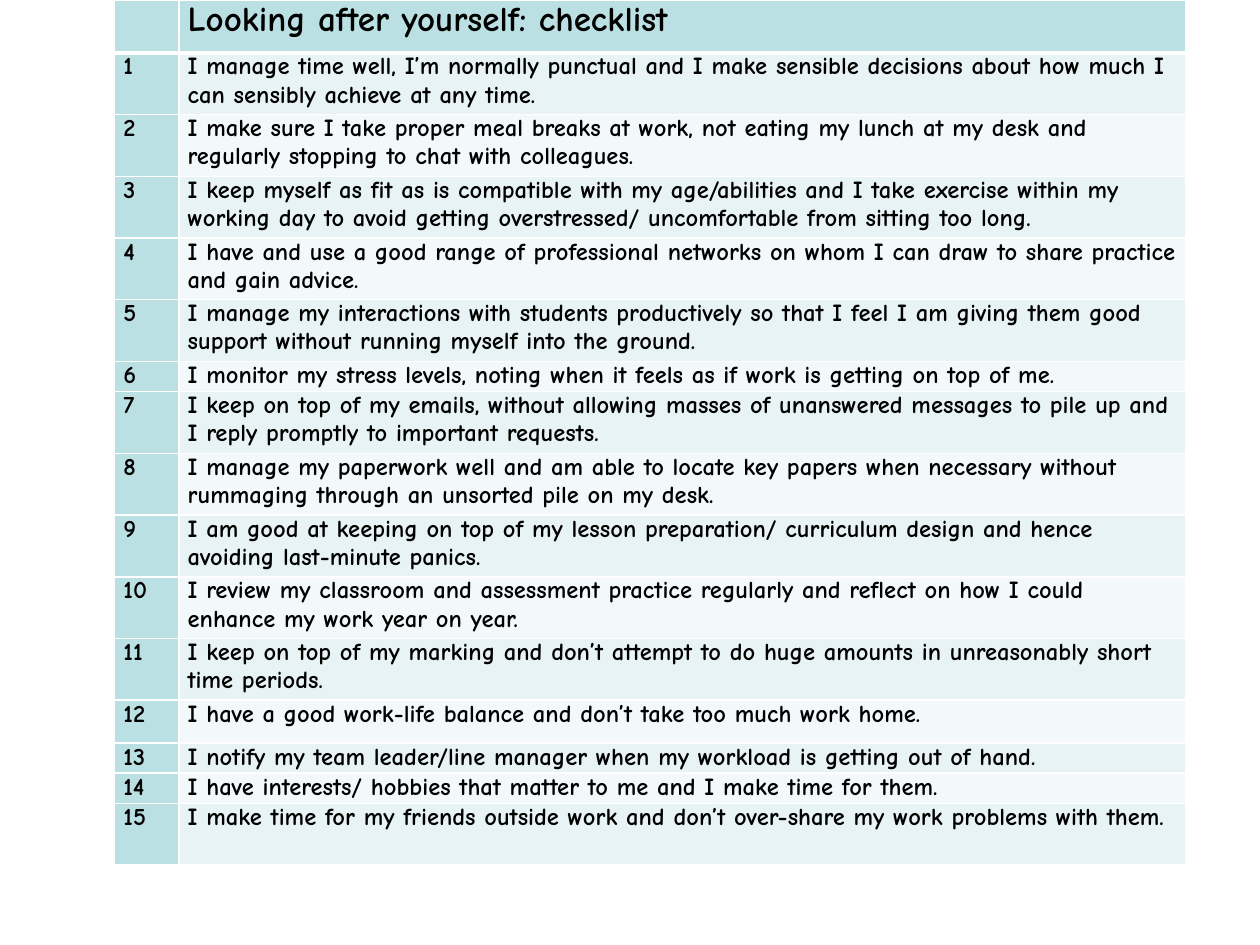
import pptx
import pptx.dml.color
import pptx.oxml
import pptx.oxml.ns
import pptx.util
from pptx.util import Inches

HEADING = "Looking after yourself: checklist"
TALL, MIDDLE, SHORT = 0.49, 0.34, 0.24
CHECKLIST = [
    ("I manage time well, I’m normally punctual and I make sensible decisions about how much I can sensibly achieve at any time.", TALL),
    ("I make sure I take proper meal breaks at work, not eating my lunch at my desk and regularly stopping to chat with colleagues.", TALL),
    ("I keep myself as fit as is compatible with my age/abilities and I take exercise within my working day to avoid getting overstressed/ uncomfortable from sitting too long.", TALL),
    ("I have and use a good range of professional networks on whom I can draw to share practice and gain advice.", TALL),
    ("I manage my interactions with students productively so that I feel I am giving them good support without running myself into the ground.", TALL),
    ("I monitor my stress levels, noting when it feels as if work is getting on top of me.", SHORT),
    ("I keep on top of my emails, without allowing masses of unanswered messages to pile up and I reply promptly to important requests.", TALL),
    ("I manage my paperwork well and am able to locate key papers when necessary without rummaging through an unsorted pile on my desk.", TALL),
    ("I am good at keeping on top of my lesson preparation/ curriculum design and hence avoiding last-minute panics.", TALL),
    ("I review my classroom and assessment practice regularly and reflect on how I could enhance my work year on year.", TALL),
    ("I keep on top of my marking and don’t attempt to do huge amounts in unreasonably short time periods.", TALL),
    ("I have a good work-life balance and don’t take too much work home.", MIDDLE),
    ("I notify my team leader/line manager when my workload is getting out of hand.", SHORT),
    ("I have interests/ hobbies that matter to me and I make time for them.", SHORT),
    ("I make time for my friends outside work and don’t over-share my work problems with them.", TALL),
]
COLUMN_WIDTHS = [0.51, 7.99]
HEADER_HEIGHT = 0.42
TEAL, BANDS = "BBE0E3", ["E7F3F4", "F3F9FA"]
BORDER = "FFFFFF"
CELL_FORMAT = {
    "margin_left": Inches(0.07),
    "margin_right": Inches(0.07),
    "margin_top": 0,
    "margin_bottom": 0,
}


def color(value):
    return pptx.dml.color.RGBColor.from_string(value)


def set_borders(cell, bottom, top):
    """Draw the four cell edges; widths are in points."""
    properties = cell._tc.get_or_add_tcPr()
    for side, width in {"L": 1, "R": 1, "T": top, "B": bottom}.items():
        properties.append(pptx.oxml.parse_xml(
            f'<a:ln{side} {pptx.oxml.ns.nsdecls("a")} w="{pptx.util.Pt(width)}">'
            f'<a:solidFill><a:srgbClr val="{BORDER}"/></a:solidFill></a:ln{side}>'))


def fill_cell(cell, text, size, fill, bottom=1, top=1):
    for name, value in CELL_FORMAT.items():
        setattr(cell, name, value)
    set_borders(cell, bottom, top)
    cell.fill.solid()
    cell.fill.fore_color.rgb = color(fill)
    if text:
        span = cell.text_frame.paragraphs[0].add_run()
        span.text = text
        font_format = {"name": "Comic Neue", "size": pptx.util.Pt(size), "bold": True}
        for name, value in font_format.items():
            setattr(span.font, name, value)
        span.font.color.rgb = color("000000")


def main():
    deck = pptx.Presentation()
    deck.slide_width, deck.slide_height = Inches(10), Inches(7.5)
    page = deck.slides.add_slide(deck.slide_layouts[6])

    heights = [HEADER_HEIGHT] + [height for _, height in CHECKLIST]
    table = page.shapes.add_table(
        len(heights), len(COLUMN_WIDTHS), Inches(0.91), 0,
        Inches(sum(COLUMN_WIDTHS)), Inches(sum(heights))).table
    for column, width in zip(table.columns, COLUMN_WIDTHS):
        column.width = Inches(width)
    for row, height in zip(table.rows, heights):
        row.height = Inches(height)

    for index, text in enumerate(["", HEADING]):
        fill_cell(table.cell(0, index), text, 20, TEAL, bottom=3)
    for number, (statement, _) in enumerate(CHECKLIST, 1):
        top = 3 if number == 1 else 1
        fill_cell(table.cell(number, 0), str(number), 14, TEAL, top=top)
        fill_cell(table.cell(number, 1), statement, 14, BANDS[(number - 1) % 2], top=top)

    deck.save("out.pptx")


if __name__ == "__main__":
    main()
